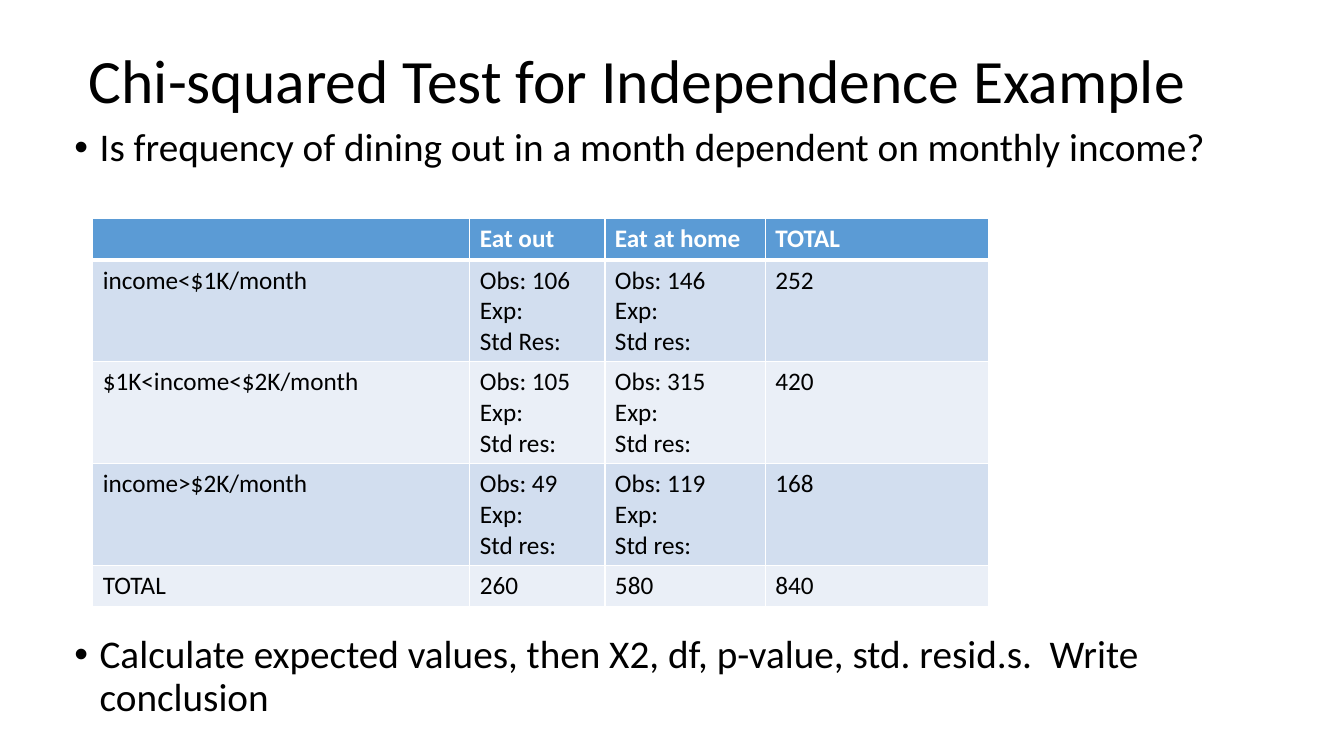
from lxml import etree
from pptx import Presentation
from pptx.dml.color import RGBColor
from pptx.enum.text import MSO_ANCHOR, PP_ALIGN
from pptx.oxml.ns import qn
from pptx.util import Inches, Pt

MIDDLE = MSO_ANCHOR.MIDDLE
LEFT = PP_ALIGN.LEFT
FONT = "Calibri"
COLORS = {"text": "000000", "white": "FFFFFF", "header": "5B9BD5",
          "odd": "D2DEEF", "even": "EAEFF7"}

TITLE = "Chi-squared Test for Independence Example"
BULLETS = [
    ("Is frequency of dining out in a month dependent on monthly income?", 10),
    ("Calculate expected values, then X2, df, p-value, std. resid.s.  Write conclusion", 332),
]
DINING = [
    ["", "Eat out", "Eat at home", "TOTAL"],
    ["income<$1K/month", "Obs: 106\nExp:\nStd Res:", "Obs: 146\nExp:\nStd res:", "252"],
    ["$1K<income<$2K/month", "Obs: 105\nExp:\nStd res:", "Obs: 315\nExp:\nStd res:", "420"],
    ["income>$2K/month", "Obs: 49\nExp:\nStd res:", "Obs: 119\nExp:\nStd res:", "168"],
    ["TOTAL", "260", "580", "840"],
]
COLUMN_WIDTHS = [3.74, 1.34, 1.59, 2.22]
ROW_HEIGHTS = [0.41, 1.01, 1.01, 1.01, 0.41]


def style_text(paragraph, size, color, bold=False):
    for run in paragraph.runs:
        run.font.name = FONT
        run.font.size = Pt(size)
        run.font.bold = bold
        run.font.color.rgb = RGBColor.from_string(COLORS[color])


def add_bullet(paragraph):
    properties = paragraph._p.get_or_add_pPr()
    properties.set("marL", str(Inches(0.25)))
    properties.set("indent", str(Inches(-0.25)))
    etree.SubElement(properties, qn("a:buFont")).set("typeface", "Arial")
    etree.SubElement(properties, qn("a:buChar")).set("char", "•")


def add_borders(cell, widths):
    properties = cell._tc.get_or_add_tcPr()
    for position, (side, width) in enumerate(widths.items()):
        line = etree.Element(qn("a:ln" + side), w=str(Pt(width)))
        fill = etree.SubElement(line, qn("a:solidFill"))
        etree.SubElement(fill, qn("a:srgbClr")).set("val", COLORS["white"])
        properties.insert(position, line)


prs = Presentation()
prs.slide_width, prs.slide_height = Inches(13.33), Inches(7.5)
slide = prs.slides.add_slide(prs.slide_layouts[5])

title = slide.shapes.title
title.left, title.top = Inches(0.78), Inches(0.1)
title.width, title.height = Inches(11.5), Inches(1.45)
title.text_frame.text = TITLE
title.text_frame.vertical_anchor = MIDDLE
heading = title.text_frame.paragraphs[0]
heading.alignment = LEFT
heading.line_spacing = 0.9
style_text(heading, 44, "text")

questions = slide.shapes.add_textbox(
    Inches(0.64), Inches(1.22), Inches(12.09), Inches(6.09)).text_frame
questions.word_wrap = True
for index, (wording, gap) in enumerate(BULLETS):
    bullet = questions.add_paragraph() if index else questions.paragraphs[0]
    bullet.text = wording
    bullet.line_spacing = 0.9
    bullet.space_before = Pt(gap)
    add_bullet(bullet)
    style_text(bullet, 28, "text")

table = slide.shapes.add_table(
    len(DINING), len(COLUMN_WIDTHS), Inches(0.92), Inches(2.17),
    Inches(sum(COLUMN_WIDTHS)), Inches(sum(ROW_HEIGHTS))).table
for column, width in zip(table.columns, COLUMN_WIDTHS):
    column.width = Inches(width)
for row, height in zip(table.rows, ROW_HEIGHTS):
    row.height = Inches(height)

for r, entries in enumerate(DINING):
    is_header = r == 0
    band = "header" if is_header else ("odd" if r % 2 else "even")
    borders = {"L": 1, "R": 1, "T": 3 if r == 1 else 1, "B": 3 if is_header else 1}
    for c, entry in enumerate(entries):
        cell = table.cell(r, c)
        cell.text_frame.text = entry
        cell.fill.solid()
        cell.fill.fore_color.rgb = RGBColor.from_string(COLORS[band])
        add_borders(cell, borders)
        for paragraph in cell.text_frame.paragraphs:
            style_text(paragraph, 18, "white" if is_header else "text", is_header)

prs.save("out.pptx")
